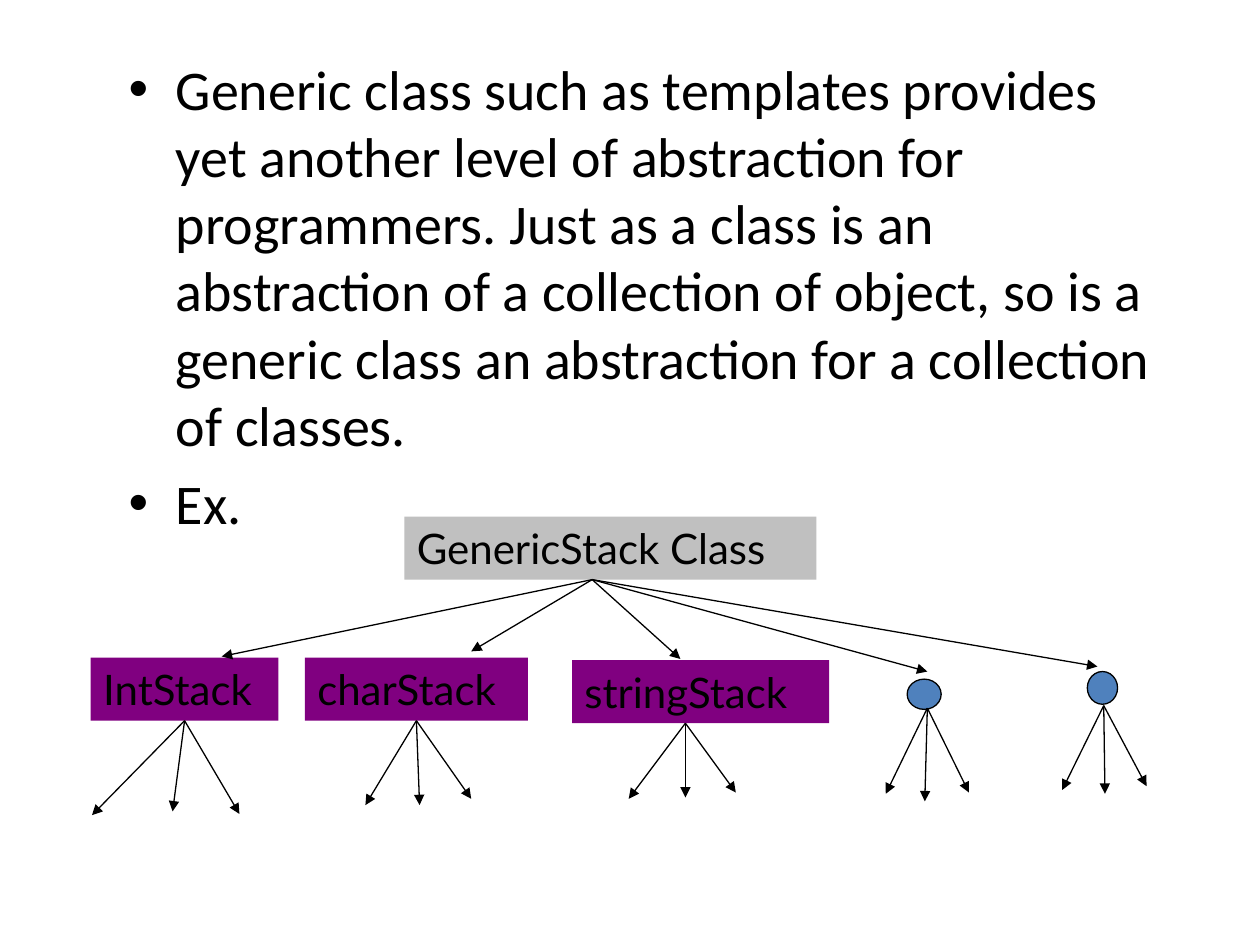
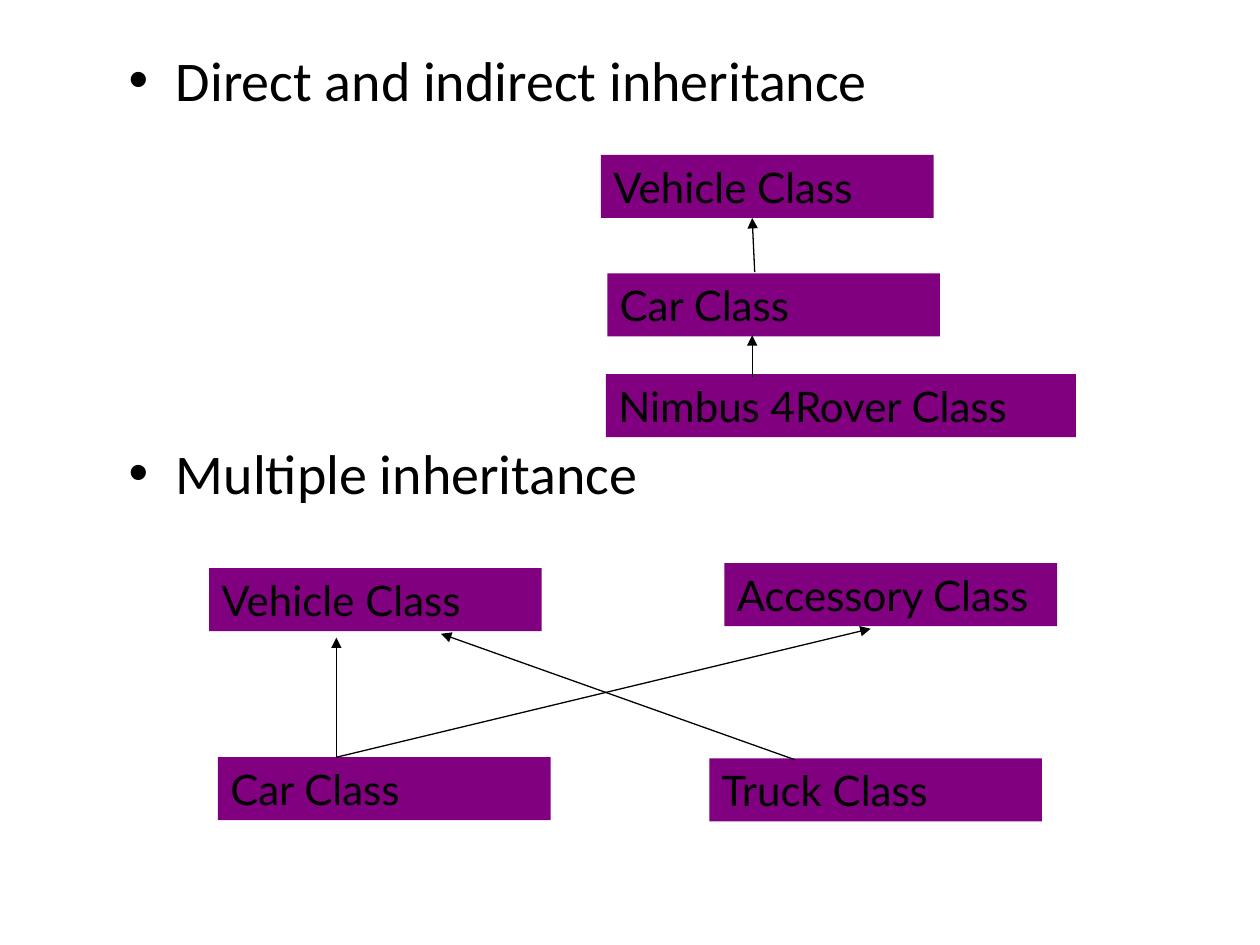
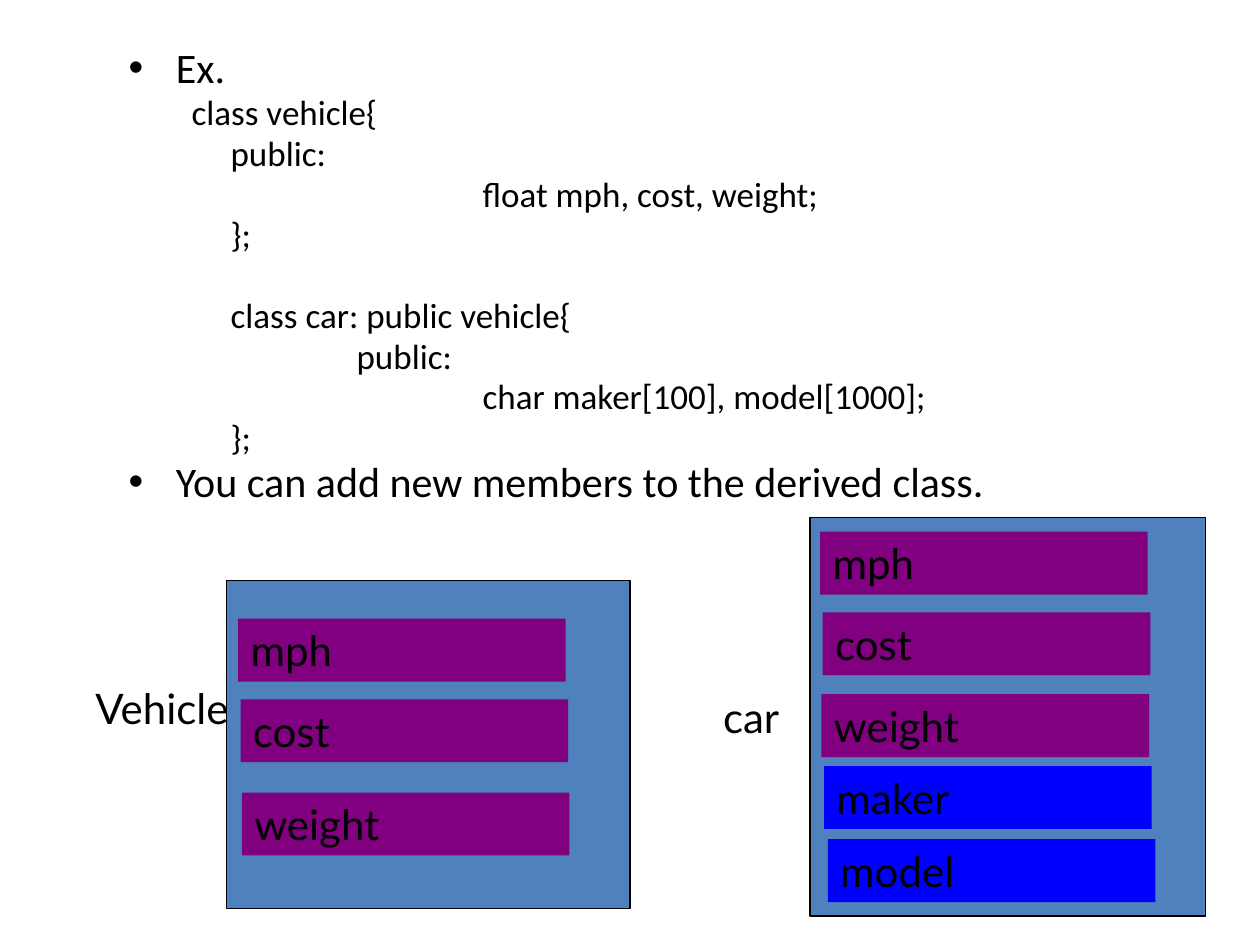
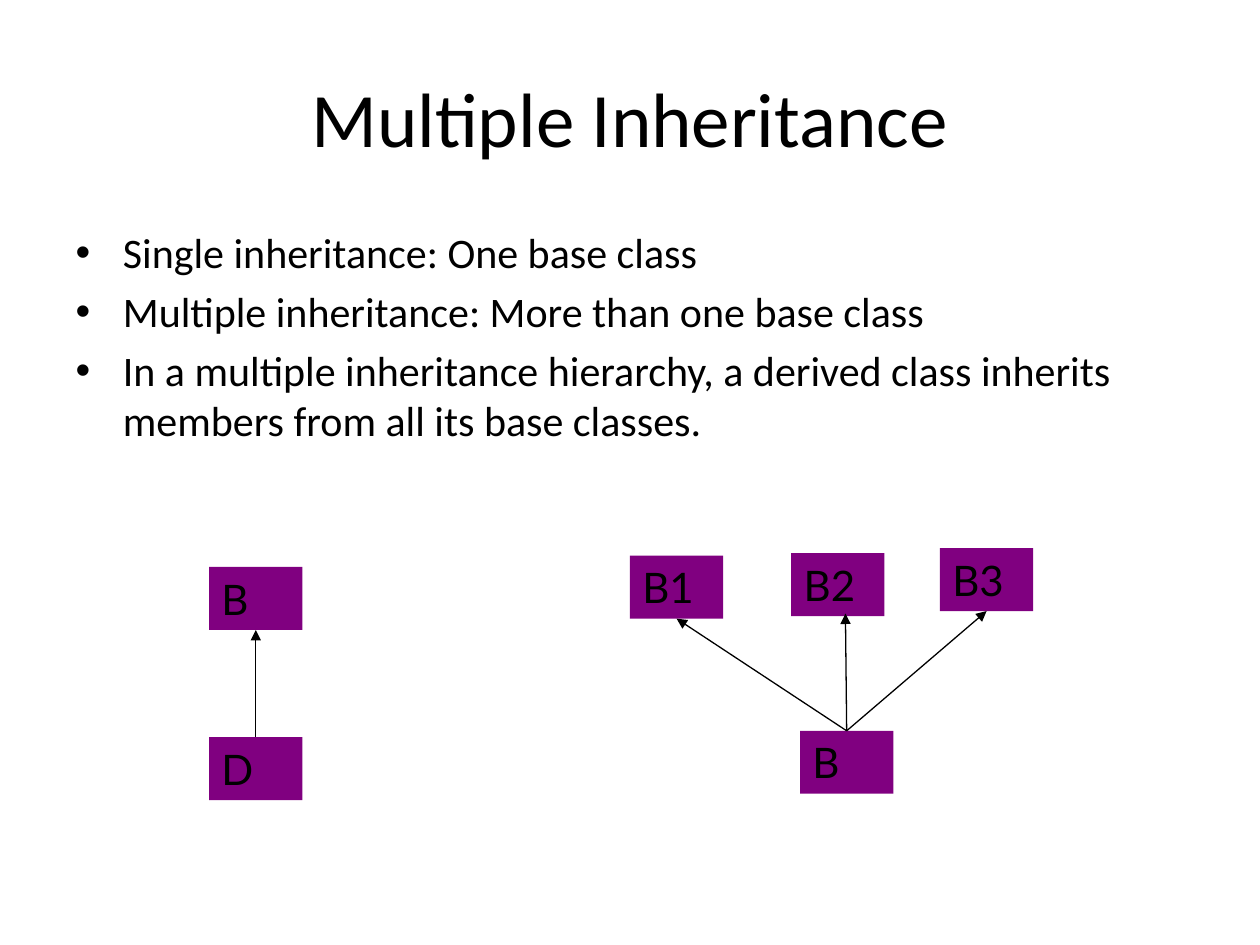
from lxml.etree import SubElement
from pptx import Presentation
from pptx.dml.color import RGBColor
from pptx.enum.shapes import MSO_CONNECTOR, MSO_SHAPE
from pptx.enum.text import MSO_ANCHOR, MSO_AUTO_SIZE, PP_ALIGN
from pptx.oxml.ns import qn
from pptx.util import Inches, Pt

COLORS = {
    "ink": "000000",
    "class": "800080",
    "generic": "C0C0C0",
    "frame": "4F81BD",
    "new": "0000FF",
}
COLS, ROWS = 100, 75
TOP, BOTTOM = 0, 2
BOX_H = 5


def paint(name):
    return RGBColor.from_string(COLORS[name])


class Deck:
    """Style and current slide; lengths are columns and rows of a 100 x 75 grid."""

    def __init__(self):
        self.prs = Presentation()
        self.prs.slide_width, self.prs.slide_height = Inches(10), Inches(7.5)
        self.slide = None

    def col(self, n):
        return round(self.prs.slide_width * n / COLS)

    def row(self, n):
        return round(self.prs.slide_height * n / ROWS)

    def area(self, x, y, w, h):
        return self.col(x), self.row(y), self.col(w), self.row(h)

    def page(self, title=None):
        self.slide = self.prs.slides.add_slide(self.prs.slide_layouts[1])
        head = self.slide.shapes.title
        if title is None:
            head.element.getparent().remove(head.element)
            return
        self.move(head, 5, 3, 90, 12.5)
        head.text_frame.vertical_anchor = MSO_ANCHOR.MIDDLE
        para = head.text_frame.paragraphs[0]
        para.alignment = PP_ALIGN.CENTER
        self.run(para, title, 44, "Calibri")

    def move(self, shape, *at):
        shape.left, shape.top, shape.width, shape.height = self.area(*at)

    def run(self, para, text, size, font):
        run = para.add_run()
        run.text = text
        run.font.size, run.font.name = Pt(size), font
        run.font.color.rgb = paint("ink")

    def body(self, *at):
        holder = self.slide.placeholders[1]
        self.move(holder, *at)
        return holder.text_frame

    def item(self, frame, text, size=32, gap=None, lead=None, indent=None):
        """Add a bullet, or an unbulleted line when an indent in inches is given."""
        para = frame.paragraphs[0]
        if para.runs:
            para = frame.add_paragraph()
        if gap is not None:
            para.space_before = Pt(gap)
        if lead is not None:
            para.line_spacing = lead
        if indent is not None:
            para.level = 1
            props = para._p.get_or_add_pPr()
            props.set("marL", str(Inches(indent)))
            props.set("indent", "0")
            SubElement(props, qn("a:buNone"))
        self.run(para, text, size, "Calibri")

    def caption(self, shape, text):
        frame = shape.text_frame
        frame.word_wrap = True
        frame.auto_size = MSO_AUTO_SIZE.SHAPE_TO_FIT_TEXT
        frame.vertical_anchor = MSO_ANCHOR.TOP
        para = frame.paragraphs[0]
        para.alignment = PP_ALIGN.LEFT
        self.run(para, text, 24, "Lato")

    def label(self, text, x, y, w):
        self.caption(self.slide.shapes.add_textbox(*self.area(x, y, w, BOX_H)), text)

    def shape(self, kind, fill, *at):
        shape = self.slide.shapes.add_shape(kind, *self.area(*at))
        shape.shadow.inherit = False
        shape.fill.solid()
        shape.fill.fore_color.rgb = paint(fill)
        return shape

    def box(self, text, x, y, w, fill="class"):
        box = self.shape(MSO_SHAPE.RECTANGLE, fill, x, y, w, BOX_H)
        box.line.fill.background()
        self.caption(box, text)
        return box

    def framed(self, kind, *at):
        shape = self.shape(kind, "frame", *at)
        shape.line.color.rgb = paint("ink")
        shape.line.width = Pt(0.75)

    def arrow(self, start, end):
        """Draw an arrow; each end is a grid point or a (shape, side) pair."""
        ends = (start, end)
        points = [(0, 0) if hasattr(a, "shape_type") else (self.col(a), self.row(b))
                  for a, b in ends]
        line = self.slide.shapes.add_connector(
            MSO_CONNECTOR.STRAIGHT, *points[0], *points[1])
        for (a, b), join in zip(ends, (line.begin_connect, line.end_connect)):
            if hasattr(a, "shape_type"):
                join(a, b)
        line.line.color.rgb = paint("ink")
        line.line.width = Pt(0.75)
        props = line.element.spPr
        SubElement(props.find(qn("a:ln")), qn("a:tailEnd"), type="triangle")
        SubElement(props, qn("a:effectLst"))

    def fan(self, start, *tips):
        for tip in tips:
            self.arrow(start, tip)


def generics(deck):
    deck.page()
    text = deck.body(9.2, 3.8, 85, 62)
    deck.item(text, "Generic class such as templates provides yet another level of "
                    "abstraction for programmers. Just as a class is an abstraction of "
                    "a collection of object, so is a generic class an abstraction for "
                    "a collection of classes.")
    deck.item(text, "Ex.")
    deck.box("GenericStack Class", 32.1, 41, 32.7, "generic")
    deck.box("stringStack", 45.4, 52.4, 20.4)
    chars = deck.box("charStack", 24.2, 52.2, 17.7)
    ints = deck.box("IntStack", 7.2, 52.2, 14.9)
    deck.framed(MSO_SHAPE.OVAL, 72, 53.9, 2.7, 2.4)
    deck.framed(MSO_SHAPE.OVAL, 86.3, 53.3, 2.4, 2.6)
    deck.fan((47, 46), (17.6, 52.1), (37.4, 51.7), (54, 52.3),
             (73.6, 53.3), (87.1, 52.9))
    deck.fan((ints, BOTTOM), (7.3, 64.7), (13.7, 64.4), (19, 64.6))
    deck.fan((chars, BOTTOM), (29, 63.9), (33.3, 63.9), (37.4, 63.4))
    deck.fan((54.4, 57.4), (49.9, 63.4), (54.4, 63.3), (58.4, 62.9))
    deck.fan((73.6, 56.2), (70.3, 63), (73.4, 63.6), (76.9, 62.9))
    deck.fan((87.6, 56), (84.3, 62.7), (87.7, 63), (91, 62.4))


def kinds(deck):
    deck.page()
    text = deck.body(9.2, 3.1, 85, 62.7)
    deck.item(text, "Direct and indirect inheritance")
    deck.item(text, "Multiple inheritance", gap=186)
    for name, x, y, w in (
            ("Vehicle Class", 47.7, 12.3, 26.4),
            ("Car Class", 48.2, 21.7, 26.4),
            ("Truck Class", 56.3, 60.2, 26.4),
            ("Car Class", 17.3, 60.1, 26.4),
            ("Accessory Class", 57.5, 44.7, 26.4),
            ("Vehicle Class", 16.6, 45.1, 26.4),
            ("Nimbus 4Rover Class", 48.1, 29.7, 37.3)):
        deck.box(name, x, y, w)
    deck.arrow((59.9, 21.6), (59.7, 17.3))
    deck.arrow((59.7, 29.9), (59.7, 26.6))
    deck.fan((26.7, 60.1), (26.7, 50.6), (69.1, 49.9))
    deck.arrow((63.1, 60.3), (35, 50.3))


def members(deck):
    deck.page()
    text = deck.body(9.2, 3.6, 85, 62.3)
    deck.item(text, "Ex.", 24, lead=0.8)
    for code, indent, gap in (
            ("class vehicle{", 0.5, None),
            ("public:", 0.81, None),
            ("float mph, cost, weight;", 2.81, None),
            ("};", 0.81, None),
            ("class car: public vehicle{", 0.81, 27),
            ("public:", 1.81, None),
            ("char maker[100], model[1000];", 2.81, None),
            ("};", 0.81, None)):
        deck.item(text, code, 20, gap, 0.8, indent)
    deck.item(text, "You can add new members to the derived class.", 24, lead=0.8)
    deck.label("Vehicle", 6.6, 53.7, 17.7)
    deck.framed(MSO_SHAPE.RECTANGLE, 18, 46.1, 32, 26)
    deck.label("car", 56.4, 54.4, 6.7)
    deck.framed(MSO_SHAPE.RECTANGLE, 64.3, 41.1, 31.4, 31.6)
    for name, x, y, fill in (
            ("mph", 18.9, 49.1, "class"),
            ("cost", 19.1, 55.5, "class"),
            ("weight", 19.2, 62.9, "class"),
            ("mph", 65.1, 42.2, "class"),
            ("cost", 65.3, 48.6, "class"),
            ("weight", 65.2, 55.1, "class"),
            ("maker", 65.4, 60.8, "new"),
            ("model", 65.7, 66.6, "new")):
        deck.box(name, x, y, 26, fill)


def multiple(deck):
    deck.page("Multiple Inheritance")
    text = deck.body(5, 17.5, 90, 49.5)
    for line in (
            "Single inheritance: One base class",
            "Multiple inheritance: More than one base class",
            "In a multiple inheritance hierarchy, a derived class inherits members "
            "from all its base classes."):
        deck.item(text, line, 24)
    base, heir, left, _, right, child = [
        deck.box(name, x, y, 7.4) for name, x, y in (
            ("B", 16.6, 45), ("D", 16.6, 58.5), ("B1", 50, 44.1),
            ("B2", 62.8, 43.9), ("B3", 74.6, 43.5), ("B", 63.5, 58))]
    deck.arrow((heir, TOP), (base, BOTTOM))
    deck.fan((child, TOP), (left, BOTTOM), (67.1, 48.7), (right, BOTTOM))


def main():
    deck = Deck()
    for build in (generics, kinds, members, multiple):
        build(deck)
    deck.prs.save("out.pptx")


if __name__ == "__main__":
    main()
